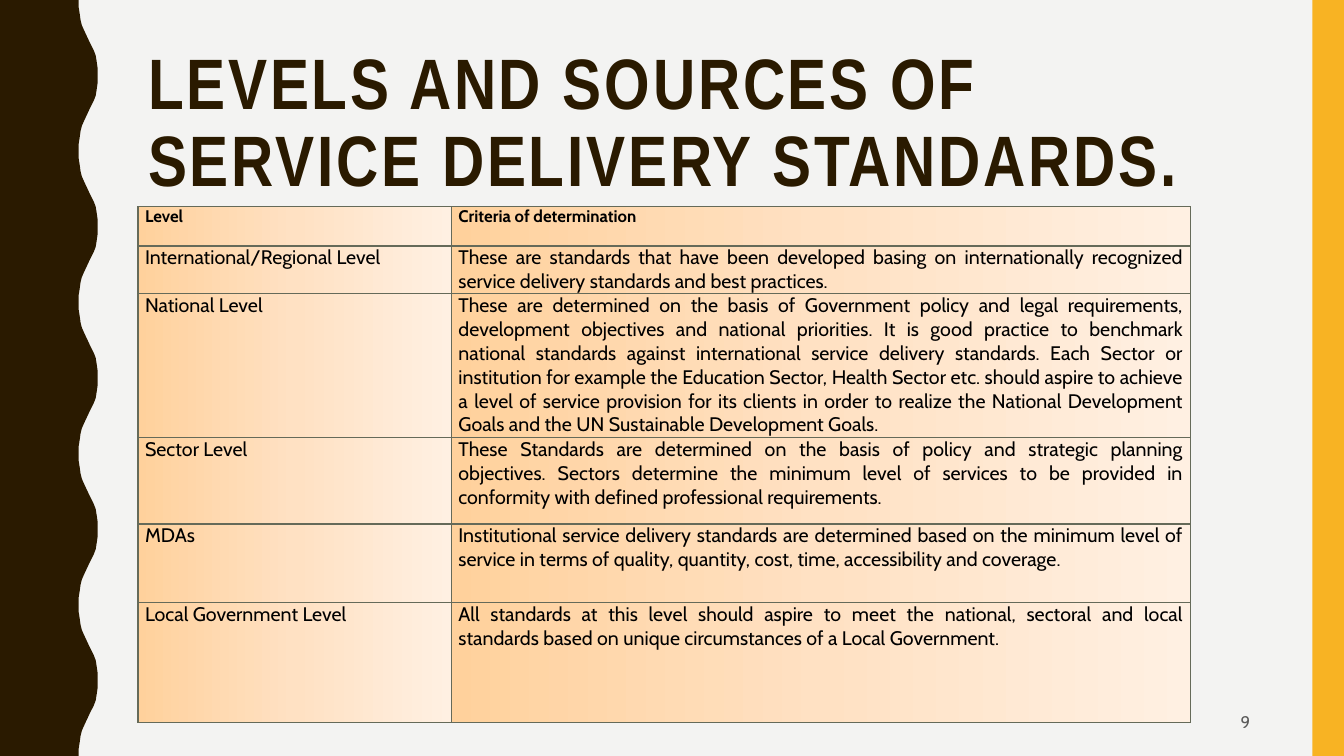
from lxml import etree
from pptx import Presentation
from pptx import util as u
from pptx.dml.color import RGBColor
from pptx.enum import shapes, text
from pptx.oxml import ns

HUES = {
    "back": "F3F3F2", "brown": "2A1A00", "gold": "F8B323", "ink": "000000",
    "gray": "595959", "line": "656A59",
}
FADE = [(0, "FFD19C"), (50, "FFE1C3"), (100, "FFF0E2")]
WIDE, HIGH = 960, 540

# Left edge of one half wave, in points
HALF = [
    (56.2, 0), (56.2, 5), (57, 10), (57.6, 14.4), (58.5, 18),
    (59.8, 21), (61.2, 24), (62.6, 27), (64, 30), (65.5, 33),
    (67, 36), (68.4, 39.6), (69.1, 44), (69.8, 49), (69.8, 54),
]
WAVES = 5

COLS = [223.9, 527.8]
ROWS = [
    (28.1, "Level", "Criteria of determination"),
    (33.8, "International/Regional Level",
     "These are standards that have been developed basing on internationally "
     "recognized service delivery standards and best practices."),
    (102.6, "National Level",
     "These are determined on the basis of Government policy and legal "
     "requirements, development objectives and national priorities. It is good "
     "practice to benchmark national standards against international service "
     "delivery standards. Each Sector or institution for example the Education "
     "Sector, Health Sector etc. should aspire to achieve a level of service "
     "provision for its clients in order to realize the National Development "
     "Goals and the UN Sustainable Development Goals."),
    (61.9, "Sector Level",
     "These Standards are determined on the basis of policy and strategic "
     "planning objectives. Sectors determine the minimum level of services to "
     "be provided in conformity with defined professional requirements."),
    (56.2, "MDAs",
     "Institutional service delivery standards are determined based on the "
     "minimum level of service in terms of quality, quantity, cost, time, "
     "accessibility and coverage."),
    (85.7, "Local Government Level",
     "All standards at this level should aspire to meet the national, sectoral "
     "and local standards based on unique circumstances of a Local Government."),
]


class Deck:
    def __init__(self, slide):
        self.slide = slide
        self.items = slide.shapes
        fill = slide.background.fill
        fill.solid()
        fill.fore_color.rgb = self.hue("back")

    def hue(self, name):
        return RGBColor.from_string(HUES[name])

    def paint(self, shape, name):
        shape.shadow.inherit = False
        shape.fill.solid()
        shape.fill.fore_color.rgb = self.hue(name)
        shape.line.fill.background()

    def letter(self, frame, words, font, size, name, align, bold=False):
        frame.text = words
        para = frame.paragraphs[0]
        para.alignment = align
        for run in para.runs:
            run.font.name = font
            run.font.size = u.Pt(size)
            run.font.bold = bold
            run.font.color.rgb = self.hue(name)
        return para

    def wave(self):
        crest = HALF + [(x, 108 - y) for x, y in HALF[-2::-1]]
        edge = [(x, y + 108 * i) for i in range(WAVES) for x, y in crest]
        points = [(u.Pt(x), u.Pt(y)) for x, y in edge + [(0, HIGH)]]
        pen = self.items.build_freeform(0, 0)
        pen.add_line_segments(points, close=True)
        self.paint(pen.convert_to_shape(), "brown")

    def bar(self, *box):
        kind = shapes.MSO_SHAPE.RECTANGLE
        self.paint(self.items.add_shape(kind, *map(u.Pt, box)), "gold")

    def title(self, words, *box):
        shape = self.items.title
        shape.left, shape.top, shape.width, shape.height = map(u.Pt, box)
        frame = shape.text_frame
        frame.word_wrap = True
        frame.auto_size = text.MSO_AUTO_SIZE.NONE
        frame.vertical_anchor = text.MSO_ANCHOR.MIDDLE
        para = self.letter(frame, words, "Arial Narrow", 51, "brown",
                           text.PP_ALIGN.LEFT, True)
        para.line_spacing = 0.9
        para.runs[0].font._element.set("spc", "200")

    def label(self, words, *box):
        frame = self.items.add_textbox(*map(u.Pt, box)).text_frame
        frame.word_wrap = True
        frame.vertical_anchor = text.MSO_ANCHOR.MIDDLE
        self.letter(frame, words, "Cabin", 12, "gray", text.PP_ALIGN.RIGHT)

    def node(self, root, tag, **attrs):
        return etree.SubElement(root, ns.qn("a:" + tag), attrs)

    def solid(self, root, code):
        self.node(root, "srgbClr", val=code)

    def dress(self, cell, row):
        props = cell._tc.get_or_add_tcPr()
        # Borders, heavier under the header
        heavy = {(0, "lnB"), (1, "lnT")}
        for side in ("lnL", "lnR", "lnT", "lnB"):
            width = u.Pt(2 if (row, side) in heavy else 1)
            line = self.node(props, side, w=str(width))
            self.solid(self.node(line, "solidFill"), HUES["line"])
        # Fade from left to right
        grad = self.node(props, "gradFill", rotWithShape="1")
        stops = self.node(grad, "gsLst")
        for place, code in FADE:
            self.solid(self.node(stops, "gs", pos=str(place * 1000)), code)
        self.node(grad, "lin", ang="0", scaled="0")

    def table(self, rows, cols, left, top):
        high = sum(row[0] for row in rows)
        box = map(u.Pt, (left, top, sum(cols), high))
        grid = self.items.add_table(len(rows), len(cols), *box).table
        grid.first_row = grid.horz_banding = False
        for col, width in zip(grid.columns, cols):
            col.width = u.Pt(width)
        for i, (height, *words) in enumerate(rows):
            grid.rows[i].height = u.Pt(height)
            for j, word in enumerate(words):
                cell = grid.cell(i, j)
                cell.margin_left = cell.margin_right = u.Pt(5)
                cell.margin_top = cell.margin_bottom = 0
                self.letter(cell.text_frame, word, "Cabin", 14 if i else 12,
                            "ink", text.PP_ALIGN.JUSTIFY, i == 0)
                self.dress(cell, i)


def main():
    show = Presentation()
    show.slide_width, show.slide_height = u.Pt(WIDE), u.Pt(HIGH)
    deck = Deck(show.slides.add_slide(show.slide_layouts[5]))

    # Side bands
    deck.wave()
    deck.bar(937.5, 0, 22.5, HIGH)

    # Title, table and page number
    deck.title("LEVELS AND SOURCES OF SERVICE DELIVERY STANDARDS.",
               98.6, 30.2, 801.4, 117.4)
    deck.table(ROWS, COLS, 98.6, 147.6)
    deck.label("9", 678.2, 501.8, 221.8, 27.4)

    show.save("out.pptx")


if __name__ == "__main__":
    main()
